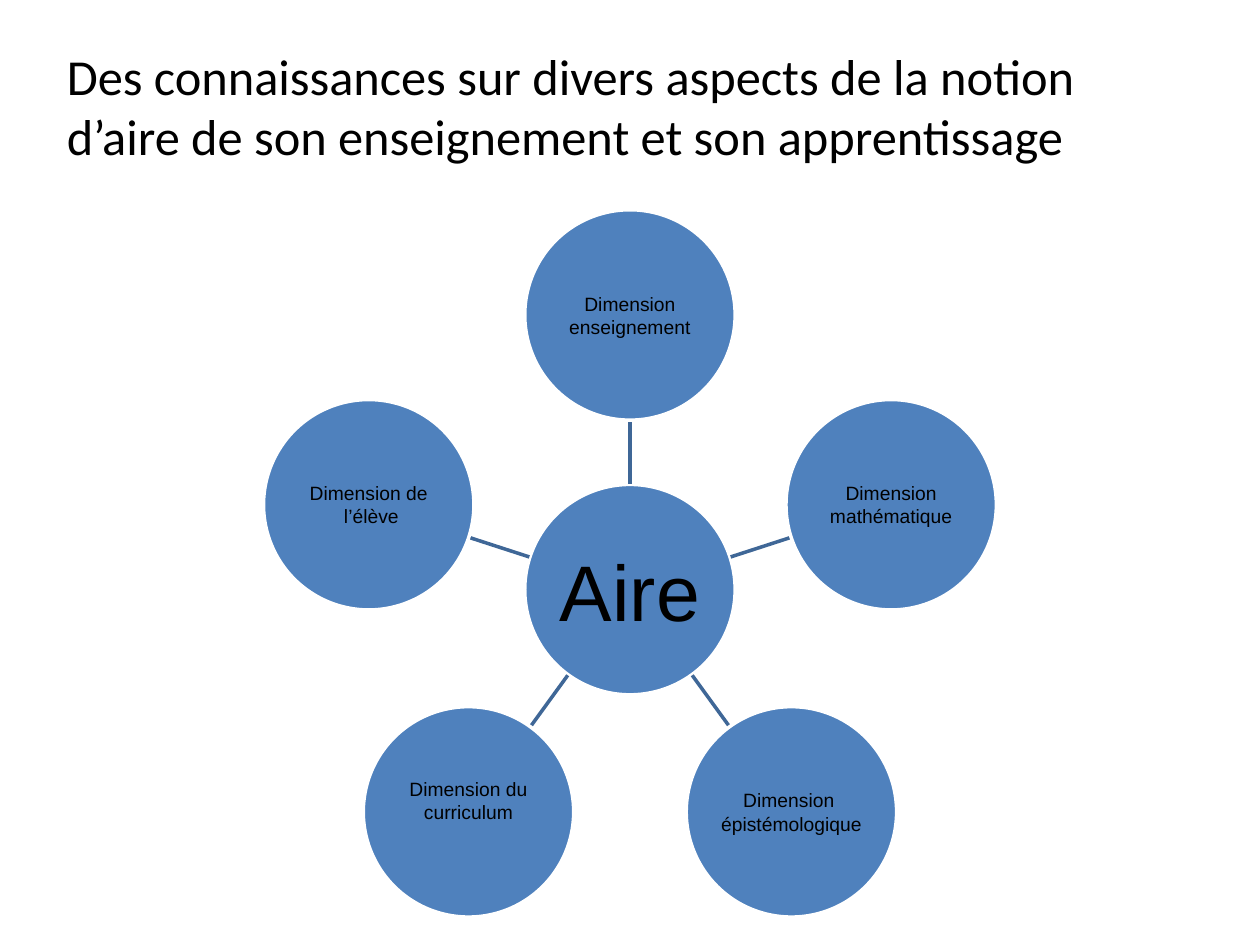
from math import cos, radians, sin

from lxml.etree import SubElement
from pptx import Presentation
from pptx.dml.color import RGBColor
from pptx.enum.shapes import MSO_CONNECTOR as Connector, MSO_SHAPE as Shape
from pptx.enum.text import MSO_ANCHOR as Anchor, MSO_AUTO_SIZE as AutoSize, PP_ALIGN as Align
from pptx.oxml.ns import qn
from pptx.util import Inches, Pt

COLOURS = {"disc": "4F81BD", "spoke": "3F6797", "edge": "FFFFFF", "text": "000000"}
CENTRE_X, CENTRE_Y = 5, 4.68
DIAMETER = 1.67
ORBIT = 2.18
SPOKE_START, SPOKE_END = 0.84, 1.34

# Lines of text and extra space below them, clockwise from the top
DIMENSIONS = [
    (["Dimension", "enseignement"], 0),
    (["Dimension", "mathématique"], 0),
    (["Dimension ", "épistémologique"], 0),
    (["Dimension du curriculum"], 0.18),
    (["Dimension de", " l’élève"], 0),
]


def colour(name):
    return RGBColor.from_string(COLOURS[name])


def on_wheel(angle, radius):
    """Return the point at an angle clockwise from the top of the wheel."""
    turn = radians(angle)
    return CENTRE_X + radius * sin(turn), CENTRE_Y - radius * cos(turn)


class WheelPage:
    def __init__(self, deck):
        self.page = deck.slides.add_slide(deck.slide_layouts[5])

    def add_text(self, para, text, font, size, align):
        para.alignment = align
        span = para.add_run()
        span.text = text
        span.font.name = font
        span.font.size = Pt(size)
        span.font.color.rgb = colour("text")

    def title(self, text):
        box = self.page.shapes.title
        box.left, box.top = Inches(0.43), Inches(0.21)
        box.width, box.height = Inches(9), Inches(1.25)
        frame = box.text_frame
        frame.auto_size = AutoSize.NONE
        frame.word_wrap = True
        frame.vertical_anchor = Anchor.MIDDLE
        self.add_text(frame.paragraphs[0], text, "Calibri", 28.8, Align.LEFT)

    def spoke(self, angle):
        ends = [*on_wheel(angle, SPOKE_START), *on_wheel(angle, SPOKE_END)]
        line = self.page.shapes.add_connector(Connector.STRAIGHT, *map(Inches, ends))
        line.line.color.rgb = colour("spoke")
        line.line.width = Pt(2)
        SubElement(line._element.spPr, qn("a:effectLst"))

    def disc(self, centre, lines, size, inset, space_below=0):
        x, y = centre
        disc = self.page.shapes.add_shape(
            Shape.OVAL, Inches(x - DIAMETER / 2), Inches(y - DIAMETER / 2),
            Inches(DIAMETER), Inches(DIAMETER))
        disc.shadow.inherit = False
        disc.fill.solid()
        disc.fill.fore_color.rgb = colour("disc")
        disc.line.color.rgb = colour("edge")
        disc.line.width = Pt(2)
        frame = disc.text_frame
        frame.word_wrap = True
        frame.vertical_anchor = Anchor.MIDDLE
        frame.margin_left = frame.margin_right = frame.margin_top = Inches(inset)
        frame.margin_bottom = Inches(inset + space_below)
        for index, text in enumerate(lines):
            para = frame.add_paragraph() if index else frame.paragraphs[0]
            self.add_text(para, text, "Arial", size, Align.CENTER)


def main():
    deck = Presentation()
    deck.slide_width, deck.slide_height = Inches(10), Inches(7.5)
    wheel = WheelPage(deck)
    wheel.title("Des connaissances sur divers aspects de la notion "
                "d’aire de son enseignement et son apprentissage")
    wheel.disc((CENTRE_X, CENTRE_Y), ["Aire"], 45, 0.03)
    for index, (lines, space_below) in enumerate(DIMENSIONS):
        angle = index * 360 / len(DIMENSIONS)
        wheel.spoke(angle)
        wheel.disc(on_wheel(angle, ORBIT), lines, 11, 0.01, space_below)
    deck.save("out.pptx")


if __name__ == "__main__":
    main()
